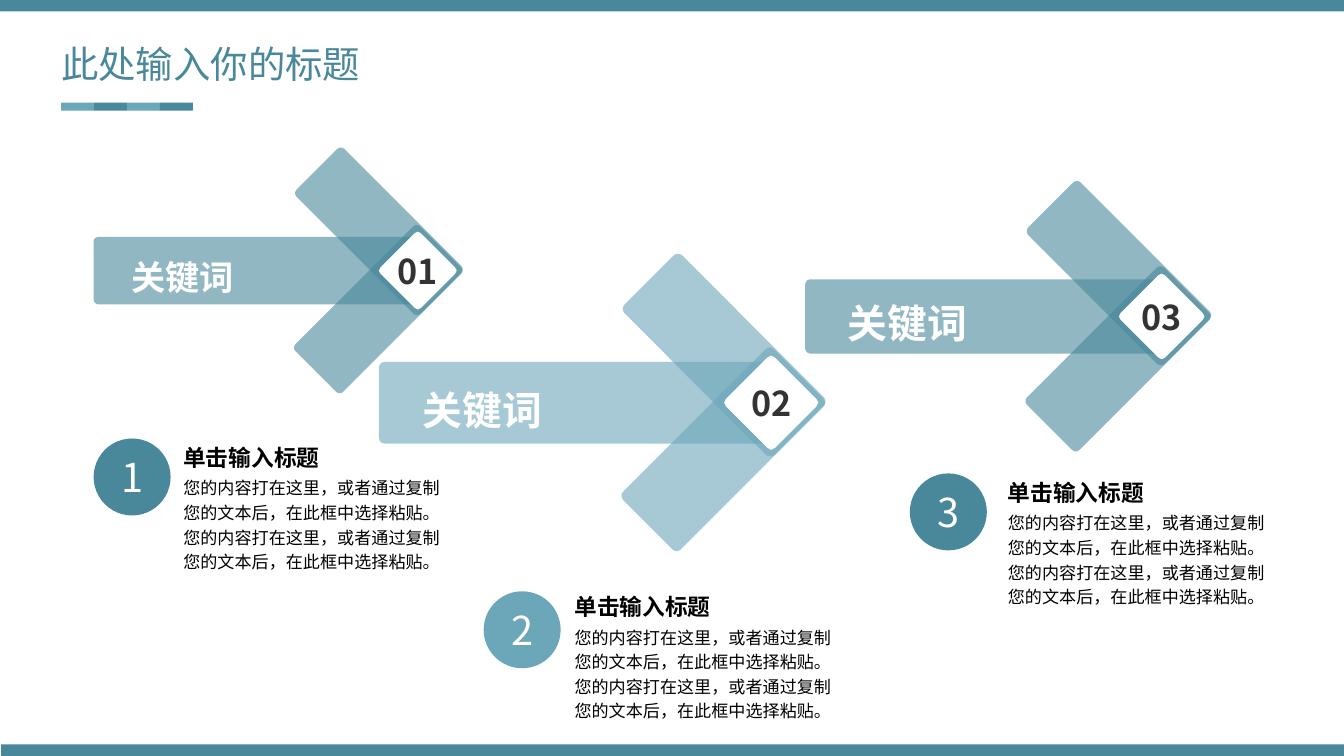
from lxml.etree import SubElement
from pptx import Presentation
from pptx.dml.color import RGBColor
from pptx.enum.shapes import MSO_SHAPE
from pptx.enum.text import MSO_ANCHOR, MSO_AUTO_SIZE, PP_ALIGN
from pptx.oxml.ns import qn
from pptx.util import Cm, Pt

TEAL = RGBColor(0x49, 0x88, 0x9B)
LIGHT_TEAL = RGBColor(0x6B, 0xA6, 0xB9)
WHITE = RGBColor(0xFF, 0xFF, 0xFF)
BLACK = RGBColor(0, 0, 0)
DARK_GREY = RGBColor(0x33, 0x33, 0x33)
FONT = "Noto Sans CJK SC"

# Lengths are centimetres.
PAGE_WIDTH, PAGE_HEIGHT, BAND_HEIGHT = 33.87, 19.05, 0.29
TITLE = "此处输入你的标题"
KEYWORD = "关键词"
HEADING = "单击输入标题"
BODY = "您的内容打在这里，或者通过复制您的文本后，在此框中选择粘贴。" * 2

# number, colour, bar left and top, scale, keyword left, top and size
ARROWS = [
    ("01", TEAL, 2.36, 5.97, 1, 2.69, 6.25, 24.4),
    ("02", LIGHT_TEAL, 9.55, 9.12, 1.21, 10.26, 9.47, 28.4),
    ("03", TEAL, 20.29, 7.04, 1.1, 20.96, 7.29, 28.4),
]
# number, colour, circle left and top, text left and top
NOTES = [
    ("1", TEAL, 2.36, 11.05, 4.62, 11.05),
    ("2", LIGHT_TEAL, 12.19, 14.9, 14.48, 14.81),
    ("3", TEAL, 22.93, 11.93, 25.4, 11.93),
]
# Arrow parts at scale 1: left and top from the bar's corner, length, rotation
ARROW_STRIPS = [(4.98, -0.99, 4.42, 45), (4.95, 0.97, 4.44, 315), (0, 0, 8.13, 0)]
STRIP_HEIGHT = 1.7
DIAMOND_LEFT, DIAMOND_TOP, DIAMOND_SIZE = 7.19, -0.13, 1.96
# Rounded diamond tip: distance along and depth, as shares of the size
TIP = [(-0.04, 0.02), (-0.02, 0.01), (0, 0), (0.02, 0.01), (0.04, 0.02)]
CIRCLE_SIZE = 1.94
TITLE_LEFT, DASH_TOP, DASH_WIDTH, DASH_HEIGHT = 1.54, 2.59, 0.83, 0.2


def paint(shape, color, alpha=None):
    shape.shadow.inherit = False
    shape.fill.solid()
    shape.fill.fore_color.rgb = color
    shape.line.fill.background()
    if alpha:
        color_node = shape.fill._xPr.find(qn("a:solidFill"))[0]
        SubElement(color_node, qn("a:alpha"), val=str(alpha * 1000))


def add_block(page, kind, left, top, width, height, color, alpha=None):
    shape = page.shapes.add_shape(kind, Cm(left), Cm(top), Cm(width), Cm(height))
    paint(shape, color, alpha)
    return shape


def write(shape, text, size, color, bold=False, align=PP_ALIGN.CENTER, spaced=False):
    """Put one run into the shape, without insets."""
    frame = shape.text_frame
    frame.margin_left = frame.margin_right = frame.margin_top = frame.margin_bottom = 0
    para = frame.paragraphs[0]
    para.alignment = align
    if spaced:
        para.line_spacing = 1.2
        before = SubElement(para._p.get_or_add_pPr(), qn("a:spcBef"))
        SubElement(before, qn("a:spcPct"), val="20000")
    span = para.add_run()
    span.text = text
    span.font.size = Pt(size)
    span.font.bold = bold
    span.font.color.rgb = color
    span.font.name = FONT
    SubElement(span.font._element, qn("a:ea"), typeface=FONT)


def add_text(page, text, left, top, width, height, size, color, **style):
    box = page.shapes.add_textbox(Cm(left), Cm(top), Cm(width), Cm(height))
    box.text_frame.word_wrap = True
    box.text_frame.auto_size = MSO_AUTO_SIZE.SHAPE_TO_FIT_TEXT
    write(box, text, size, color, **style)


def add_diamond(page, left, top, size, number):
    top_tip = [(0.5 + along, depth) for along, depth in TIP]
    right_tip = [(1 - y, x) for x, y in top_tip]
    bottom_tip = [(1 - x, 1 - y) for x, y in top_tip]
    left_tip = [(y, 1 - x) for x, y in top_tip]
    points = [(Cm(left + x * size), Cm(top + y * size))
              for x, y in top_tip + right_tip + bottom_tip + left_tip]
    builder = page.shapes.build_freeform(*points[0])
    builder.add_line_segments(points[1:], close=True)
    diamond = builder.convert_to_shape()
    paint(diamond, WHITE)
    diamond.text_frame.word_wrap = False
    diamond.text_frame.vertical_anchor = MSO_ANCHOR.MIDDLE
    write(diamond, number, 24.4, DARK_GREY, bold=True)


def add_arrow(page, number, color, left, top, scale):
    for dx, dy, length, rotation in ARROW_STRIPS:
        strip = add_block(page, MSO_SHAPE.ROUNDED_RECTANGLE,
                          left + dx * scale, top + dy * scale,
                          length * scale, STRIP_HEIGHT * scale, color, alpha=60)
        strip.adjustments[0] = 0.07
        strip.rotation = rotation
    add_diamond(page, left + DIAMOND_LEFT * scale, top + DIAMOND_TOP * scale,
                DIAMOND_SIZE * scale, number)


def add_note(page, number, color, circle_left, circle_top, left, top):
    circle = add_block(page, MSO_SHAPE.OVAL, circle_left, circle_top,
                       CIRCLE_SIZE, CIRCLE_SIZE, color)
    circle.text_frame.vertical_anchor = MSO_ANCHOR.MIDDLE
    write(circle, number, 28.4, WHITE)
    add_text(page, HEADING, left, top, 3.61, 0.79, 16.2, BLACK,
             bold=True, align=PP_ALIGN.LEFT, spaced=True)
    add_text(page, BODY, left, top + 0.89, 6.48, 2.49, 12.2, BLACK,
             align=PP_ALIGN.LEFT, spaced=True)


def main():
    deck = Presentation()
    deck.slide_width, deck.slide_height = Cm(PAGE_WIDTH), Cm(PAGE_HEIGHT)
    page = deck.slides.add_slide(deck.slide_layouts[6])

    for left, top in [(0, 0), (0.03, PAGE_HEIGHT - BAND_HEIGHT)]:
        add_block(page, MSO_SHAPE.RECTANGLE, left, top,
                  PAGE_WIDTH - left, BAND_HEIGHT, TEAL)

    for number, color, left, top, scale, *_ in ARROWS:
        add_arrow(page, number, color, left, top, scale)
    for *_, left, top, size in ARROWS:
        add_text(page, KEYWORD, left, top, 3.81, 1.3, size, WHITE,
                 bold=True, spaced=True)
    for note in NOTES:
        add_note(page, *note)

    add_text(page, TITLE, TITLE_LEFT, 1.04, 10.29, 1.14, 26.7, TEAL,
             align=PP_ALIGN.LEFT)
    for index, color in enumerate([LIGHT_TEAL, TEAL] * 2):
        add_block(page, MSO_SHAPE.RECTANGLE, TITLE_LEFT + index * DASH_WIDTH,
                  DASH_TOP, DASH_WIDTH, DASH_HEIGHT, color)

    deck.save("out.pptx")


if __name__ == "__main__":
    main()
